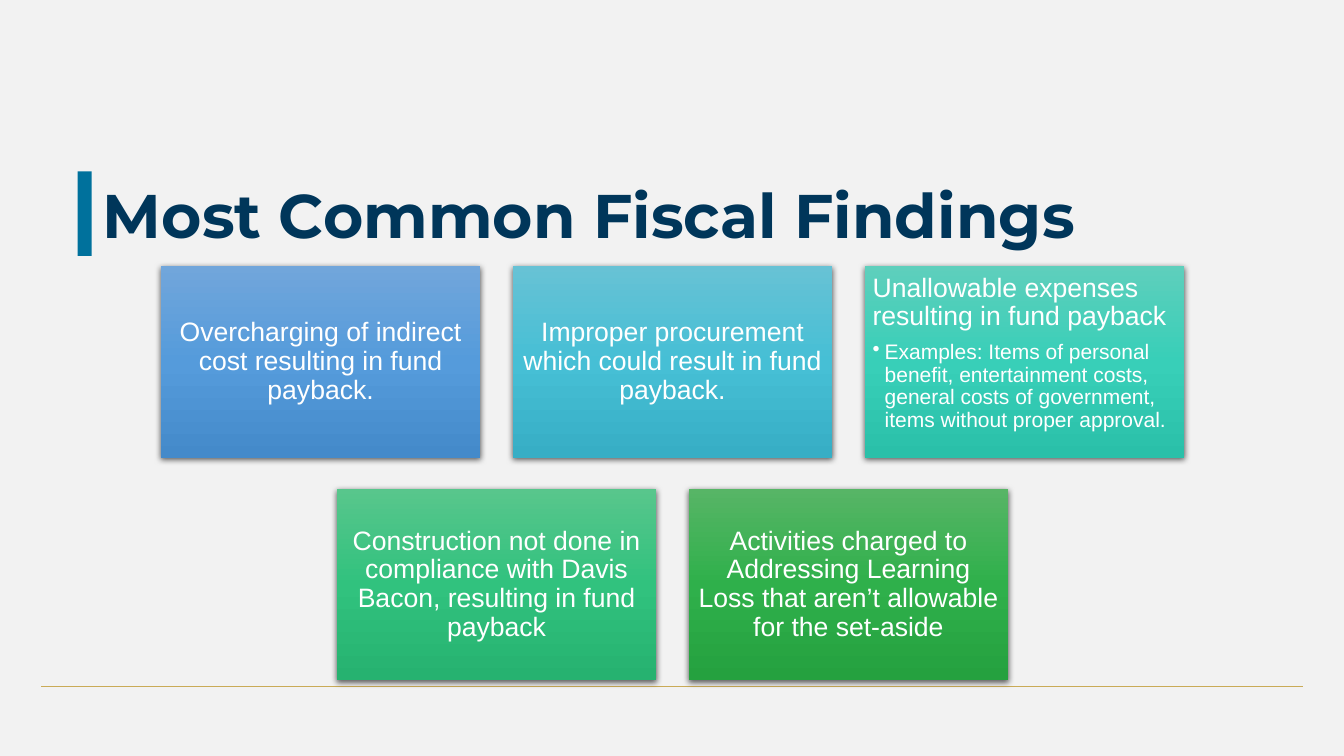
from copy import deepcopy

from lxml import etree
from pptx import Presentation
from pptx.dml.color import RGBColor
from pptx.enum import shapes, text
from pptx.oxml import ns
from pptx.util import Inches, Pt

TITLE = "Most Common Fiscal Findings"
FINDING_ROWS = [
    [
        ("Overcharging of indirect cost resulting in fund payback.", None,
         ("71A6DB", "559BDB", "448ACA")),
        ("Improper procurement which could result in fund payback.", None,
         ("67C2D5", "46BFD5", "37AEC5")),
        ("Unallowable expenses resulting in fund payback",
         "Examples: Items of personal benefit, entertainment costs, general costs "
         "of government, items without proper approval.",
         ("5ECFBC", "38CFB8", "2AC0A9")),
    ],
    [
        ("Construction not done in compliance with Davis Bacon, resulting in fund payback",
         None, ("58C68C", "31C27E", "26B270")),
        ("Activities charged to Addressing Learning Loss that aren’t allowable for the set-aside",
         None, ("57B566", "2FB04B", "25A13F")),
    ],
]
CENTER_X, ROWS_TOP = 6.67, 2.64
CARD_W, CARD_H, GAP_X, GAP_Y = 3.17, 1.9, 0.32, 0.31


def color(hex_string):
    return RGBColor.from_string(hex_string)


def add_effects(shape):
    return etree.SubElement(shape._element.spPr, ns.qn("a:effectLst"))


def add_shadow(card):
    shadow = etree.SubElement(add_effects(card), ns.qn("a:outerShdw"),
                              blurRad=str(Pt(4.5)), dist=str(Pt(1.5)),
                              dir="5400000", algn="ctr", rotWithShape="0")
    black = etree.SubElement(shadow, ns.qn("a:srgbClr"), val="000000")
    etree.SubElement(black, ns.qn("a:alpha"), val="63000")


def fill_gradient(card, hexes):
    card.fill.gradient()
    card.fill.gradient_angle = 270
    stop_list = card._element.spPr.find(ns.qn("a:gradFill")).find(ns.qn("a:gsLst"))
    stop_list.append(deepcopy(stop_list[-1]))
    for stop, position, hex_string in zip(card.fill.gradient_stops, (0, 0.5, 1), hexes):
        stop.position = position
        stop.color.rgb = color(hex_string)


def format_paragraph(paragraph, size, align):
    paragraph.alignment = align
    paragraph.line_spacing = 0.9
    paragraph.font.size = Pt(size)
    paragraph.font.name = "Arial"
    paragraph.font.color.rgb = color("FFFFFF")


def add_card(slide, left, top, finding, examples, hexes):
    card = slide.shapes.add_shape(shapes.MSO_SHAPE.RECTANGLE, Inches(left), Inches(top),
                                  Inches(CARD_W), Inches(CARD_H))
    fill_gradient(card, hexes)
    card.line.fill.background()
    add_shadow(card)
    frame = card.text_frame
    frame.word_wrap = True
    frame.margin_left = frame.margin_right = Inches(0.08)
    frame.margin_top = frame.margin_bottom = Inches(0.08)
    frame.vertical_anchor = text.MSO_ANCHOR.TOP if examples else text.MSO_ANCHOR.MIDDLE
    frame.text = finding
    heading = frame.paragraphs[0]
    format_paragraph(heading, 19, text.PP_ALIGN.LEFT if examples else text.PP_ALIGN.CENTER)
    if examples:
        heading.space_after = Pt(7)
        detail = frame.add_paragraph()
        detail.text = examples
        detail.level = 1
        properties = detail._p.get_or_add_pPr()
        properties.set("marL", str(Inches(0.12)))
        properties.set("indent", str(Inches(-0.12)))
        etree.SubElement(properties, ns.qn("a:buChar"), char="•")
        format_paragraph(detail, 15, text.PP_ALIGN.LEFT)


def main():
    deck = Presentation()
    deck.slide_width, deck.slide_height = Inches(13.33), Inches(7.5)
    slide = deck.slides.add_slide(deck.slide_layouts[5])
    slide.background.fill.solid()
    slide.background.fill.fore_color.rgb = color("F2F2F2")

    footer_rule = slide.shapes.add_connector(shapes.MSO_CONNECTOR.STRAIGHT, Inches(0.41),
                                             Inches(6.81), Inches(12.92), Inches(6.81))
    footer_rule.line.color.rgb = color("CAAB57")
    footer_rule.line.width = Pt(1)
    add_effects(footer_rule)

    accent = slide.shapes.add_shape(shapes.MSO_SHAPE.RECTANGLE, Inches(0.77), Inches(1.7),
                                    Inches(0.14), Inches(0.84))
    accent.fill.solid()
    accent.fill.fore_color.rgb = color("00719C")
    accent.line.fill.background()
    accent.shadow.inherit = False

    title = slide.shapes.title
    title.left, title.top = Inches(0.92), Inches(1.44)
    title.width, title.height = Inches(11.5), Inches(1.45)
    title.text_frame.text = TITLE
    title.text_frame.vertical_anchor = text.MSO_ANCHOR.MIDDLE
    headline = title.text_frame.paragraphs[0]
    headline.alignment = text.PP_ALIGN.LEFT
    headline.line_spacing = 0.9
    headline.font.size = Pt(44)
    headline.font.name = "Montserrat"
    headline.font.bold = True
    headline.font.color.rgb = color("00365A")

    for row, findings in enumerate(FINDING_ROWS):
        row_width = len(findings) * (CARD_W + GAP_X) - GAP_X
        top = ROWS_TOP + row * (CARD_H + GAP_Y)
        for column, finding in enumerate(findings):
            left = CENTER_X - row_width / 2 + column * (CARD_W + GAP_X)
            add_card(slide, left, top, *finding)

    deck.save("out.pptx")


if __name__ == "__main__":
    main()
